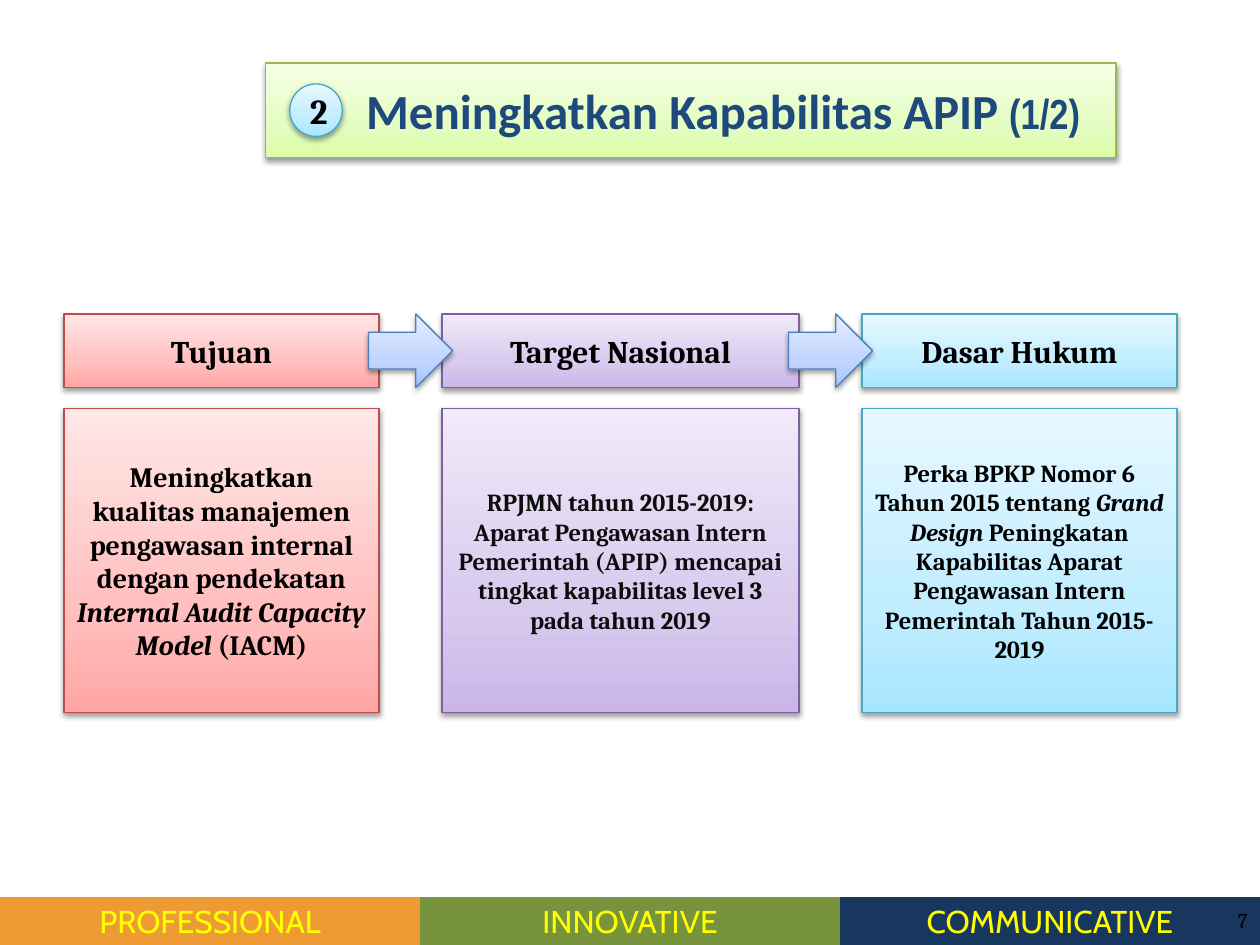
from lxml import etree
from pptx import Presentation
from pptx.dml.color import RGBColor
from pptx.enum.shapes import MSO_SHAPE
from pptx.enum.text import MSO_ANCHOR, PP_ALIGN
from pptx.oxml import parse_xml
from pptx.oxml.ns import nsdecls, qn
from pptx.util import Inches, Pt

RECT, OVAL, ARROW = MSO_SHAPE.RECTANGLE, MSO_SHAPE.OVAL, MSO_SHAPE.RIGHT_ARROW
CENTER, RIGHT = PP_ALIGN.CENTER, PP_ALIGN.RIGHT
MIDDLE = MSO_ANCHOR.MIDDLE
NO_TABLE_STYLE = "{2D5ABB26-0587-4C30-8999-92F81FD0307C}"

COLORS = {
    "black": "000000", "soft_black": "0D0D0D", "navy": "1F497D", "yellow": "FFFF00",
    "orange": "EF9B35", "olive": "77933C", "deep_blue": "17375E",
}
# Each theme: gradient from bottom to top, then the outline
THEMES = {
    "red": (("FFA6A5", "FFC0BF", "FFE7E7"), "BF4C48"),
    "purple": (("C9B5E8", "D8CBEE", "F0EAF9"), "7D60A0"),
    "aqua": (("A7E6FF", "C1EDFF", "E7F8FF"), "46AAC5"),
    "blue": (("A4C4FF", "BFD4FF", "E6EEFF"), "4B7EBC"),
    "green": (("DAFDA7", "E4FDC2", "F5FFE6"), "98B954"),
}
STOPS = (0, 35, 100)


class SlideBuilder:
    """Draws on a grid of 120 columns by 90 rows, twelve to the inch."""

    def __init__(self, slide):
        self.slide = slide

    def grid(self, *cells):
        return [Inches(cell / 12) for cell in cells]

    def fill_frame(self, frame, runs, align=CENTER, **style):
        """Fill a frame with (text, overrides) runs in one paragraph."""
        frame.word_wrap = True
        frame.vertical_anchor = MIDDLE
        self.add_runs(frame.paragraphs[0], runs, align, style)

    def add_runs(self, paragraph, runs, align, style):
        paragraph.alignment = align
        for text, overrides in runs:
            run = paragraph.add_run()
            run.text = text
            formats = {"name": "Cambria", "bold": True, "color": "black", **style, **overrides}
            run.font.color.rgb = RGBColor.from_string(COLORS[formats.pop("color")])
            for attribute, value in formats.items():
                setattr(run.font, attribute, value)

    def panel(self, kind, box, theme, runs=(), **style):
        """Add a shape with a vertical gradient, an outline and a soft shadow."""
        shape = self.slide.shapes.add_shape(kind, *self.grid(*box))
        gradient, outline = THEMES[theme]
        shape.line.color.rgb = RGBColor.from_string(outline)
        shape.line.width = Pt(0.75)
        stops = "".join(
            f'<a:gs pos="{stop * 1000}"><a:srgbClr val="{color}"/></a:gs>'
            for stop, color in zip(STOPS, gradient))
        properties = shape.element.spPr
        properties.find(qn("a:prstGeom")).addnext(parse_xml(
            f'<a:gradFill {nsdecls("a")} rotWithShape="1"><a:gsLst>{stops}</a:gsLst>'
            '<a:lin ang="16200000" scaled="0"/></a:gradFill>'))
        shape.shadow.inherit = False
        shadow = etree.SubElement(
            properties.find(qn("a:effectLst")), qn("a:outerShdw"),
            blurRad="40000", dist="20000", dir="5400000", rotWithShape="0")
        shade = etree.SubElement(shadow, qn("a:srgbClr"), val=COLORS["black"])
        etree.SubElement(shade, qn("a:alpha"), val="38000")
        self.fill_frame(shape.text_frame, runs, **style)
        return shape

    def label(self, box, text, align, **style):
        textbox = self.slide.shapes.add_textbox(*self.grid(*box))
        self.fill_frame(textbox.text_frame, [(text, {})], align, **style)

    def band(self, box, entries, **style):
        """Add a one-row table of (text, fill) cells."""
        frame = self.slide.shapes.add_table(1, len(entries), *self.grid(*box))
        frame.element.find(".//" + qn("a:tableStyleId")).text = NO_TABLE_STYLE
        frame.table.first_row = frame.table.horz_banding = False
        for cell, (text, fill) in zip(frame.table.rows[0].cells, entries):
            cell.fill.solid()
            cell.fill.fore_color.rgb = RGBColor.from_string(COLORS[fill])
            cell.vertical_anchor = MIDDLE
            self.add_runs(cell.text_frame.paragraphs[0], [(text, {})], CENTER, style)


ITALIC = {"italic": True}
# Heading, theme, width in columns, body style, body runs
TOPICS = [
    ("Tujuan", "red", 30, {"size": Pt(16)}, [
        ("Meningkatkan kualitas manajemen pengawasan internal dengan pendekatan ", {}),
        ("Internal Audit Capacity Model ", ITALIC), ("(IACM)", {})]),
    ("Target Nasional", "purple", 34, {"size": Pt(14), "color": "soft_black"}, [
        ("RPJMN tahun 2015-2019: Aparat Pengawasan Intern Pemerintah (APIP) "
         "mencapai tingkat kapabilitas level 3 pada tahun 2019", {})]),
    ("Dasar Hukum", "aqua", 30, {"size": Pt(14)}, [
        ("Perka BPKP Nomor 6 Tahun 2015 tentang ", {}), ("Grand Design ", ITALIC),
        ("Peningkatan Kapabilitas Aparat Pengawasan Intern Pemerintah Tahun 2015-2019", {})]),
]
LEFT, TOP, COLUMN_GAP, ROW_GAP = 6.1, 29.9, 6, 2
HEADING_HEIGHT, BODY_HEIGHT, ARROW_WIDTH = 7, 29, 8


def main():
    presentation = Presentation()
    presentation.slide_width, presentation.slide_height = Inches(10), Inches(7.5)
    builder = SlideBuilder(presentation.slides.add_slide(presentation.slide_layouts[6]))

    builder.band((0, 85.4, 120, 4.9), [
        ("PROFESSIONAL", "orange"), ("INNOVATIVE", "olive"), ("COMMUNICATIVE", "deep_blue"),
    ], size=Pt(18), name="Cabin", color="yellow", bold=False)
    title = builder.panel(RECT, (25.3, 6, 81, 9), "green", [
        ("Meningkatkan Kapabilitas APIP ", {"size": Pt(28), "name": "Calibri"}),
        ("(1/2)", {"size": Pt(24), "name": "Arial Narrow"}),
    ], color="navy")
    title.text_frame.margin_left = Inches(0.61)
    builder.label((94, 85.2, 26, 4.8), "7", RIGHT, size=Pt(12), bold=False)

    body_top = TOP + HEADING_HEIGHT + ROW_GAP
    left = LEFT
    arrow_lefts = []
    for heading, theme, width, body_style, body in TOPICS:
        builder.panel(RECT, (left, TOP, width, HEADING_HEIGHT), theme,
                      [(heading, {})], size=Pt(18))
        builder.panel(RECT, (left, body_top, width, BODY_HEIGHT), theme, body, **body_style)
        arrow_lefts.append(left + width + (COLUMN_GAP - ARROW_WIDTH) / 2)
        left += width + COLUMN_GAP
    for arrow_left in arrow_lefts[:-1]:
        builder.panel(ARROW, (arrow_left, TOP, ARROW_WIDTH, HEADING_HEIGHT), "blue")

    builder.panel(OVAL, (27.6, 8, 5, 5), "aqua", [("2", {})], size=Pt(20))
    presentation.save("out.pptx")


if __name__ == "__main__":
    main()
